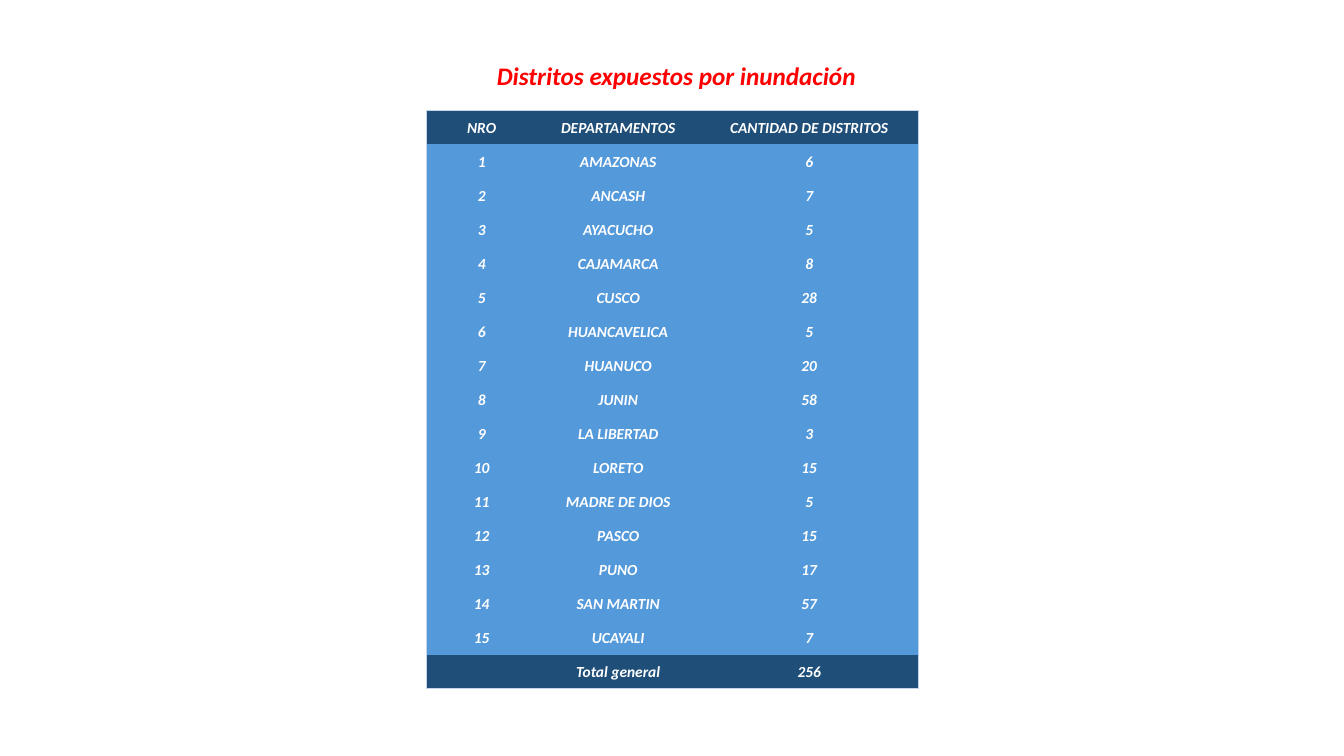
from lxml import etree
from pptx import Presentation
from pptx.dml.color import RGBColor
from pptx.enum.text import MSO_ANCHOR, MSO_AUTO_SIZE, PP_ALIGN
from pptx.oxml.ns import qn
from pptx.util import Pt

CENTER = PP_ALIGN.CENTER
MIDDLE = MSO_ANCHOR.MIDDLE
GROW = MSO_AUTO_SIZE.SHAPE_TO_FIT_TEXT

RED = RGBColor(0xFF, 0x00, 0x00)
WHITE = RGBColor(0xFF, 0xFF, 0xFF)
NAVY = RGBColor(0x1F, 0x4E, 0x79)
BLUE = RGBColor(0x54, 0x99, 0xDA)
PALE = RGBColor(0xC4, 0xD5, 0xEB)

HEAD = ("NRO", "DEPARTAMENTOS", "CANTIDAD DE DISTRITOS")
COUNTS = (
    ("AMAZONAS", 6), ("ANCASH", 7), ("AYACUCHO", 5), ("CAJAMARCA", 8),
    ("CUSCO", 28), ("HUANCAVELICA", 5), ("HUANUCO", 20), ("JUNIN", 58),
    ("LA LIBERTAD", 3), ("LORETO", 15), ("MADRE DE DIOS", 5), ("PASCO", 15),
    ("PUNO", 17), ("SAN MARTIN", 57), ("UCAYALI", 7),
)
SHARES = (1.09, 1.62, 2.17)


def style(frame, size, color):
    for para in frame.paragraphs:
        para.alignment = CENTER
        for run in para.runs:
            font = run.font
            font.name = "Calibri"
            font.size = Pt(size)
            font.bold = font.italic = True
            font.color.rgb = color


def add_title(slide, left, top, width, height):
    title = slide.shapes.title
    title.left, title.top = Pt(left), Pt(top)
    title.width, title.height = Pt(width), Pt(height)
    frame = title.text_frame
    frame.text = "Distritos expuestos por inundación"
    frame.word_wrap = False
    frame.auto_size = GROW
    frame.vertical_anchor = MIDDLE
    frame.paragraphs[0].line_spacing = 1.0
    style(frame, 18, RED)


def set_edges(cell, drawn):
    props = cell._tc.get_or_add_tcPr()
    for side in "LRTB":
        line = etree.SubElement(props, qn(f"a:ln{side}"), w=str(Pt(0.5)))
        if side in drawn:
            fill = etree.SubElement(line, qn("a:solidFill"))
            etree.SubElement(fill, qn("a:srgbClr"), val=str(PALE))
        else:
            etree.SubElement(line, qn("a:noFill"))


def add_counts(slide, left, top, width, height):
    total = sum(count for _, count in COUNTS)
    body = [(i, *pair) for i, pair in enumerate(COUNTS, 1)]
    rows = [HEAD, *body, ("", "Total general", total)]
    last, end = len(rows) - 1, len(HEAD) - 1
    table = slide.shapes.add_table(
        len(rows), len(HEAD), Pt(left), Pt(top), Pt(width), Pt(height)).table
    table.first_row = table.horz_banding = False
    for col, share in zip(table.columns, SHARES):
        col.width = Pt(width * share / sum(SHARES))
    for r, row in enumerate(rows):
        table.rows[r].height = Pt(height / len(rows))
        for c, value in enumerate(row):
            cell = table.cell(r, c)
            marks = (("L", c == 0), ("R", c == end), ("T", r == 0), ("B", r == last))
            set_edges(cell, [side for side, outer in marks if outer])
            cell.fill.solid()
            cell.fill.fore_color.rgb = NAVY if r in (0, last) else BLUE
            cell.margin_left = cell.margin_right = cell.margin_top = Pt(0.7)
            cell.margin_bottom = 0
            cell.vertical_anchor = MIDDLE
            cell.text_frame.text = str(value)
            style(cell.text_frame, 11, WHITE)


def main():
    deck = Presentation()
    deck.slide_width, deck.slide_height = Pt(960), Pt(540)
    slide = deck.slides.add_slide(deck.slide_layouts[5])
    add_title(slide, 346.3, 39.6, 273.6, 29)
    add_counts(slide, 304.8, 78.9, 351.4, 413.3)
    deck.save("out.pptx")


if __name__ == "__main__":
    main()
